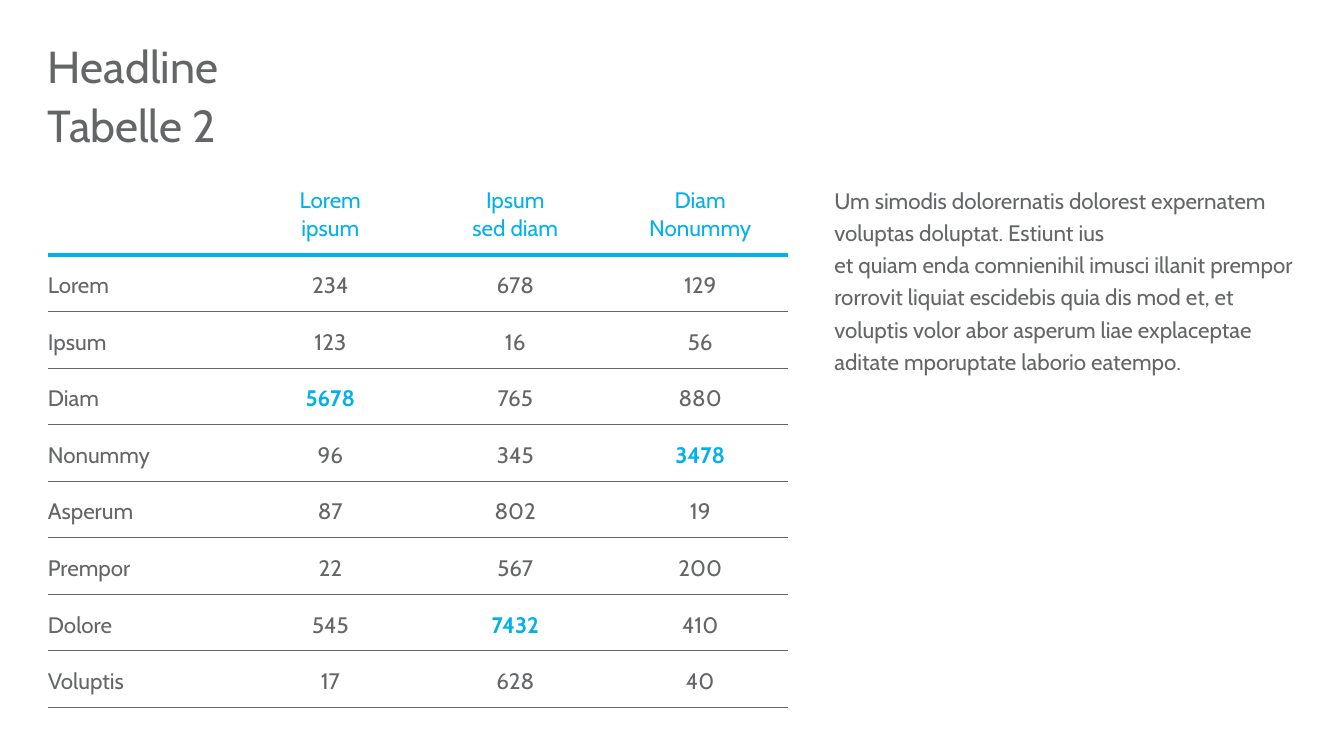
from pptx import Presentation
from pptx.dml.color import RGBColor
from pptx.enum.text import MSO_ANCHOR, MSO_AUTO_SIZE, PP_ALIGN
from pptx.oxml.ns import qn
from pptx.util import Pt
from lxml import etree

TOP, MIDDLE = MSO_ANCHOR.TOP, MSO_ANCHOR.MIDDLE
LEFT, CENTER = PP_ALIGN.LEFT, PP_ALIGN.CENTER
FIXED = MSO_AUTO_SIZE.NONE
COLORS = {"gray": "636566", "cyan": "00B1EB", "white": "FFFFFF"}
NO_GRID = "{2D5ABB26-0587-4C30-8999-92F81FD0307C}"


def style(par, size, color="gray", align=LEFT, bold=False):
    par.alignment = align
    font = par.font
    font.name, font.size, font.bold = "Cabin", Pt(size), bold
    font.color.rgb = RGBColor.from_string(COLORS[color])


def border(cell, side, color, width):
    props = cell._tc.get_or_add_tcPr()
    line = etree.SubElement(props, qn("a:" + side), w=str(Pt(width)))
    fill = etree.SubElement(line, qn("a:solidFill"))
    etree.SubElement(fill, qn("a:srgbClr"), val=COLORS[color])


deck = Presentation()
deck.slide_width, deck.slide_height = Pt(960), Pt(540)
slide = deck.slides.add_slide(deck.slide_layouts[1])

# Headline and second line
heads = [(slide.shapes.title, "Headline", 31.7), (slide.placeholders[1], "Tabelle 2", 70)]
for shape, text, top in heads:
    shape.left, shape.top, shape.width, shape.height = Pt(34.2), Pt(top), Pt(892), Pt(36.8)
    frame = shape.text_frame
    frame.text = text
    frame.auto_size, frame.vertical_anchor = FIXED, TOP
    frame.margin_left = frame.margin_top = frame.margin_right = frame.margin_bottom = 0
    par = frame.paragraphs[0]
    props = par._p.get_or_add_pPr()
    props.set("marL", "0")
    props.set("indent", "0")
    etree.SubElement(props, qn("a:buNone"))
    par.space_before = Pt(0)
    style(par, 32)
slide.shapes.title.text_frame.paragraphs[0].line_spacing = 0.9
slide.placeholders[1].text_frame.paragraphs[0].space_after = Pt(10)

# Table
rows = [
    ["", "Lorem\nipsum", "Ipsum\nsed diam", "Diam\nNonummy"],
    ["Lorem", "234", "678", "129"],
    ["Ipsum", "123", "16", "56"],
    ["Diam", "5678", "765", "880"],
    ["Nonummy", "96", "345", "3478"],
    ["Asperum", "87", "802", "19"],
    ["Prempor", "22", "567", "200"],
    ["Dolore", "545", "7432", "410"],
    ["Voluptis", "17", "628", "40"],
]
accents = {"5678", "3478", "7432"}
holder = slide.shapes.add_table(len(rows), 4, Pt(34.2), Pt(133.9), Pt(528.4), Pt(371.6))
holder.element.xpath(".//a:tableStyleId")[0].text = NO_GRID
table = holder.table
table.first_row = table.horz_banding = False
for col in table.columns:
    col.width = Pt(132.1)
for r, row in enumerate(rows):
    table.rows[r].height = Pt(40.42 if r else 48.24)
    for c, text in enumerate(row):
        cell = table.cell(r, c)
        cell.margin_left = Pt(7.2 if c else 0)
        cell.margin_top = Pt(3.6 if r else 0)
        cell.margin_right = cell.margin_bottom = 0
        cell.vertical_anchor = MIDDLE if r else TOP
        if r:
            border(cell, "lnT", *(("gray", 0.75) if r > 1 else ("cyan", 3)))
        border(cell, "lnB", *(("gray", 0.75) if r else ("cyan", 3)))
        cell.fill.solid()
        cell.fill.fore_color.rgb = RGBColor.from_string(COLORS["white"])
        cell.text = text
        accent = text in accents
        color = "cyan" if accent or r == 0 else "gray"
        for par in cell.text_frame.paragraphs:
            style(par, 16, color, CENTER if c else LEFT, accent)

# Text beside the table
box = slide.shapes.add_textbox(Pt(596), Pt(129.6), Pt(330), Pt(216))
frame = box.text_frame
frame.word_wrap = True
frame.margin_left = frame.margin_top = frame.margin_right = frame.margin_bottom = 0
par = frame.paragraphs[0]
par.text = (
    "Um simodis dolorernatis dolorest expernatem voluptas doluptat. Estiunt ius \v"
    "et quiam enda comnienihil imusci illanit prempor rorrovit liquiat escidebis "
    "quia dis mod et, et voluptis volor abor asperum liae explaceptae aditate "
    "mporuptate laborio eatempo."
)
par.line_spacing, par.space_after = 1.2, Pt(10)
style(par, 16)

deck.save("out.pptx")
